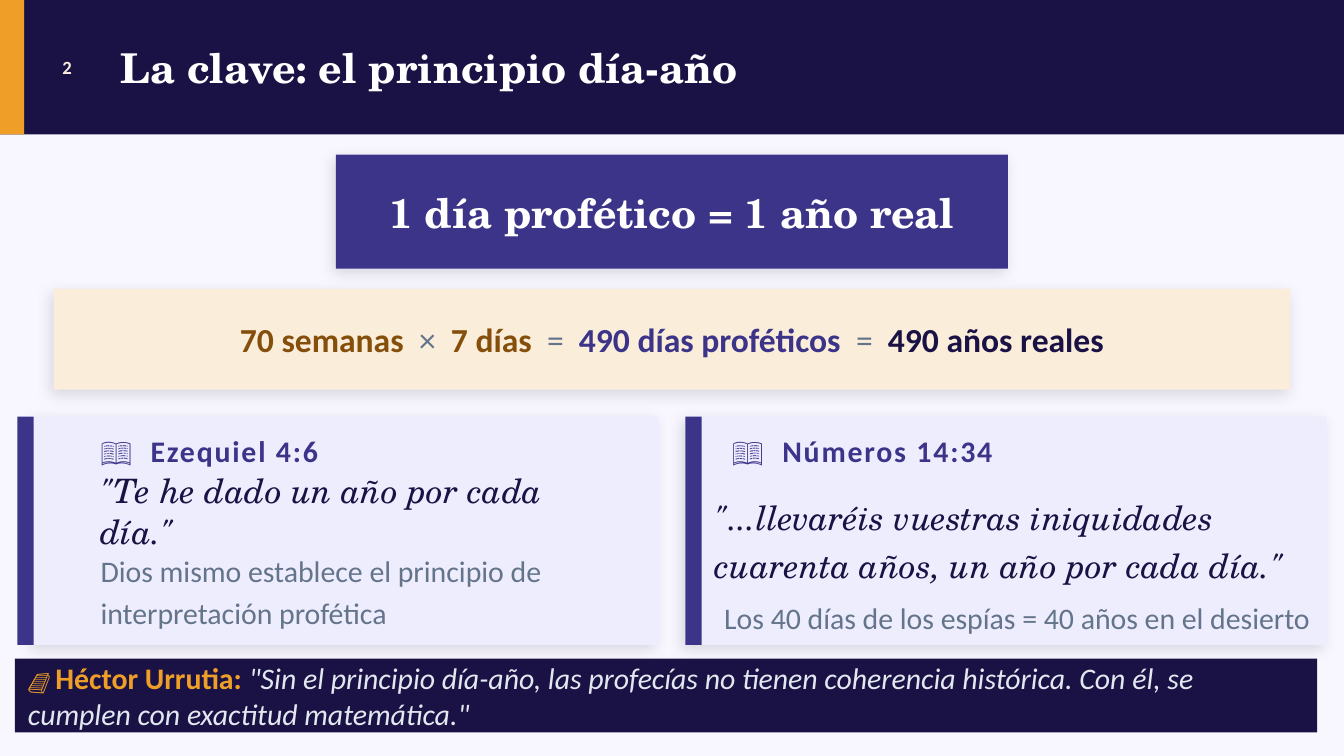
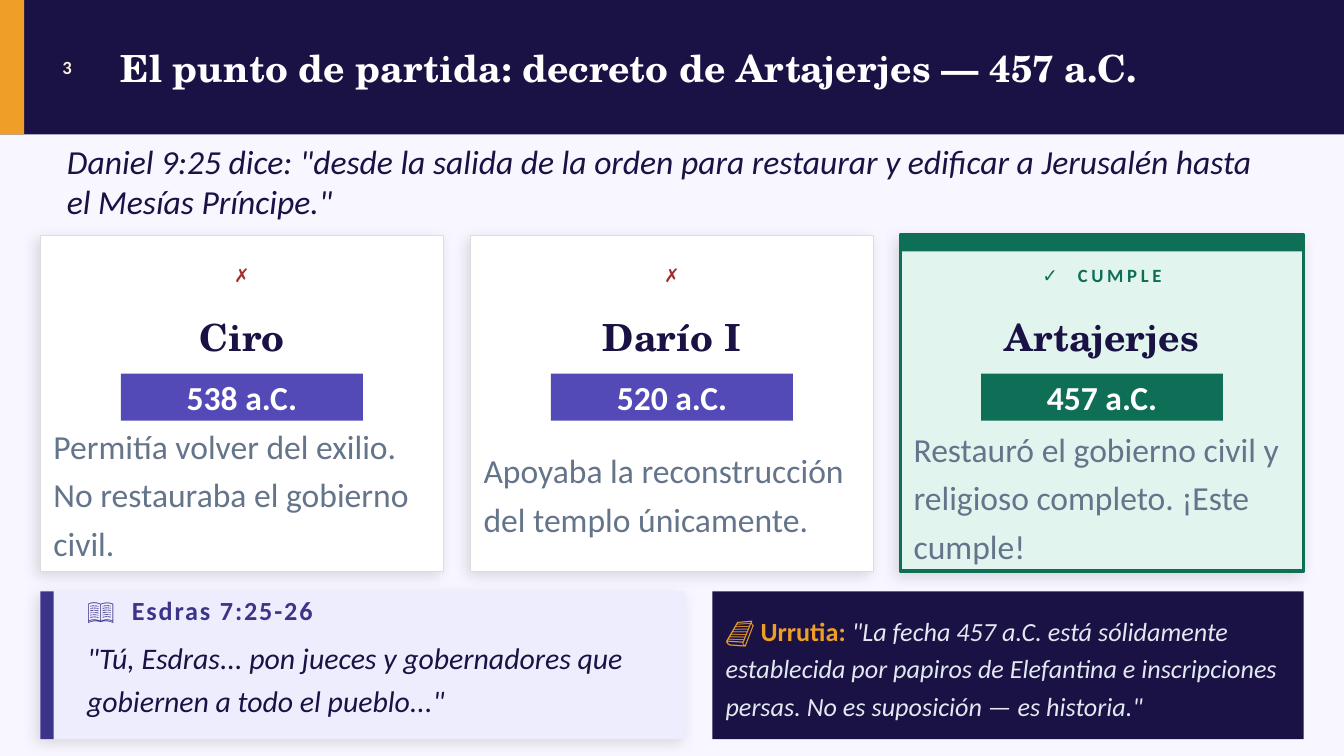
import pptx
import pptx.dml.color
import pptx.enum.shapes
import pptx.enum.text
import pptx.oxml
import pptx.oxml.ns
import pptx.util
from pptx.util import Inches

COLORS = {
    "background": "F8F7FF",
    "navy": "1A1245",
    "amber": "EF9F27",
    "cream": "FAEEDA",
    "brown": "854F0B",
    "indigo": "3C3489",
    "violet": "534AB7",
    "lavender": "EEEDFE",
    "slate": "64748B",
    "pale": "E2E8F0",
    "white": "FFFFFF",
    "border": "DDDDDD",
    "red": "A32D2D",
    "green": "0F6E56",
    "mint": "E1F5EE",
}
SANS = "Calibri"
SERIF = "TeX Gyre Schola"
LEFT = pptx.enum.text.PP_ALIGN.LEFT
CENTER = pptx.enum.text.PP_ALIGN.CENTER


def color(name):
    return pptx.dml.color.RGBColor.from_string(COLORS[name])


def inside(box, left, top, width, height):
    return box[0] + left, box[1] + top, width, height


def add_shadow(shape):
    effects = shape._element.spPr.find(pptx.oxml.ns.qn("a:effectLst"))
    effects.append(pptx.oxml.parse_xml(
        f'<a:outerShdw {pptx.oxml.ns.nsdecls("a")} blurRad="{pptx.util.Pt(8)}" '
        f'dist="{pptx.util.Pt(3)}" dir="{135 * 60000}" algn="bl" rotWithShape="0">'
        '<a:srgbClr val="000000"><a:alpha val="12000"/></a:srgbClr></a:outerShdw>'))


def add_panel(slide, box, fill, shadow=False, border=None, border_width=0):
    shape = slide.shapes.add_shape(
        pptx.enum.shapes.MSO_SHAPE.RECTANGLE, *map(Inches, box))
    shape.fill.solid()
    shape.fill.fore_color.rgb = color(fill)
    if border:
        shape.line.color.rgb = color(border)
        shape.line.width = pptx.util.Pt(border_width)
    else:
        shape.line.fill.background()
    shape.shadow.inherit = False
    if shadow:
        add_shadow(shape)


def text_run(text, size, ink, font=SANS, bold=False, italic=False, tracking=0):
    return text, size, ink, font, bold, italic, tracking


def add_text(slide, box, *runs, align=LEFT, line_spacing=None):
    text_frame = slide.shapes.add_textbox(*map(Inches, box)).text_frame
    text_frame.word_wrap = True
    text_frame.vertical_anchor = pptx.enum.text.MSO_ANCHOR.MIDDLE
    paragraph = text_frame.paragraphs[0]
    paragraph.alignment = align
    if line_spacing:
        paragraph.line_spacing = line_spacing
    for text, size, ink, font, bold, italic, tracking in runs:
        run = paragraph.add_run()
        run.text = text
        run.font.size = pptx.util.Pt(size)
        run.font.name = font
        run.font.color.rgb = color(ink)
        run.font.bold = bold
        run.font.italic = italic
        if tracking:
            run._r.get_or_add_rPr().set("spc", str(tracking * 100))


def add_page(presentation, number, title, title_size):
    slide = presentation.slides.add_slide(presentation.slide_layouts[6])
    slide.background.fill.solid()
    slide.background.fill.fore_color.rgb = color("background")
    add_panel(slide, (0, 0, 10, 1), "navy")
    add_panel(slide, (0, 0, 0.18, 1), "amber")
    add_text(slide, (0.3, 0, 0.4, 1),
             text_run(str(number), 10, "cream", bold=True), align=CENTER)
    add_text(slide, (0.8, 0, 9, 1),
             text_run(title, title_size, "white", SERIF, bold=True))
    return slide


def add_equation(slide, box):
    add_panel(slide, box, "cream", shadow=True)
    terms = [("70 semanas", "brown"), ("  ×  ", "slate"), ("7 días", "brown"),
             ("  =  ", "slate"), ("490 días proféticos", "indigo"),
             ("  =  ", "slate"), ("490 años reales", "navy")]
    add_text(slide, box, *[text_run(text, 18, ink, bold=ink != "slate")
                           for text, ink in terms], align=CENTER)


def add_verse_card(slide, box, bar, reference, reference_box, reference_size):
    add_panel(slide, box, "lavender", shadow=True)
    add_panel(slide, inside(box, *bar, box[3]), "indigo")
    add_text(slide, inside(box, *reference_box),
             text_run(f"📖  {reference}", reference_size, "indigo", bold=True, tracking=1))


def add_quote_band(slide, box, text_width, runs, line_spacing=None):
    add_panel(slide, box, "navy")
    add_text(slide, (*box[:2], text_width, box[3]), *runs, line_spacing=line_spacing)


def add_decree_card(slide, box, king, year, verdict, reason, fulfilled):
    if fulfilled:
        add_panel(slide, box, "mint", True, "green", 2)
        add_panel(slide, inside(box, 0, 0, box[2], 0.12), "green")
    else:
        add_panel(slide, box, "white", True, "border", 0.5)
    add_text(slide, inside(box, 0, 0.12, box[2], 0.35),
             text_run(verdict, 10, "green" if fulfilled else "red", bold=True, tracking=2),
             align=CENTER)
    add_text(slide, inside(box, 0, 0.53, box[2], 0.45),
             text_run(king, 20, "navy", SERIF, bold=True), align=CENTER)
    year_box = inside(box, 0.6, 1.03, box[2] - 1.2, 0.35)
    add_panel(slide, year_box, "green" if fulfilled else "violet")
    add_text(slide, year_box, text_run(year, 18, "white", bold=True), align=CENTER)
    add_text(slide, inside(box, 0, 1.47 if fulfilled else 1.45, box[2], 0.9),
             text_run(reason, 18, "slate"), line_spacing=1.2)


def build_principle_slide(presentation):
    slide = add_page(presentation, 2, "La clave: el principio día-año", 22)
    key_box = (2.5, 1.15, 5, 0.85)
    add_panel(slide, key_box, "indigo", shadow=True)
    add_text(slide, key_box,
             text_run("1 día profético = 1 año real", 22, "white", SERIF, bold=True),
             align=CENTER)
    add_equation(slide, (0.4, 2.15, 9.2, 0.75))
    verses = [
        ((0.25, 3.1, 4.65, 1.7), (-0.12, 0, 0.12), "Ezequiel 4:6", (0.4, 0.1, 4.1, 0.3),
         '"Te he dado un año por cada día."', (0.4, 0.45, 4.1, 0.5), None,
         "Dios mismo establece el principio de interpretación profética",
         (0.4, 1, 4.1, 0.55)),
        ((5.1, 3.1, 4.77, 1.7), (0, 0, 0.12), "Números 14:34", (0.25, 0.1, 4.1, 0.3),
         '"...llevaréis vuestras iniquidades cuarenta años, un año por cada día."',
         (0.12, 0.57, 4.58, 0.65), 1.2,
         "Los 40 días de los espías = 40 años en el desierto",
         (0.19, 1.27, 4.58, 0.4)),
    ]
    for (box, bar, reference, reference_box, quote, quote_box, quote_spacing,
         note, note_box) in verses:
        add_verse_card(slide, box, bar, reference, reference_box, 16)
        add_text(slide, inside(box, *quote_box),
                 text_run(quote, 18, "navy", SERIF, italic=True),
                 line_spacing=quote_spacing)
        add_text(slide, inside(box, *note_box), text_run(note, 16, "slate"),
                 line_spacing=1.2)
    add_quote_band(slide, (0.11, 4.9, 9.69, 0.55), 9.44, [
        text_run("📘 ", 11, "amber", bold=True),
        text_run("Héctor Urrutia: ", 16, "amber", bold=True),
        text_run('"Sin el principio día-año, las profecías no tienen coherencia histórica. '
                 'Con él, se cumplen con exactitud matemática."', 16, "pale", italic=True),
    ])


def build_decree_slide(presentation):
    slide = add_page(
        presentation, 3, "El punto de partida: decreto de Artajerjes — 457 a.C.", 20)
    add_text(slide, (0.4, 1.1, 9.2, 0.5), text_run(
        'Daniel 9:25 dice: "desde la salida de la orden para restaurar y edificar '
        'a Jerusalén hasta el Mesías Príncipe."', 18, "navy", italic=True))
    decrees = [
        ("Ciro", "538 a.C.", "✗",
         "Permitía volver del exilio. No restauraba el gobierno civil.", False),
        ("Darío I", "520 a.C.", "✗",
         "Apoyaba la reconstrucción del templo únicamente.", False),
        ("Artajerjes", "457 a.C.", "✓  CUMPLE",
         "Restauró el gobierno civil y religioso completo. ¡Este cumple!", True),
    ]
    for column, decree in enumerate(decrees):
        add_decree_card(slide, (0.3 + 3.2 * column, 1.75, 3, 2.5), *decree)
    verse_box = (0.3, 4.4, 4.8, 1.1)
    add_verse_card(slide, verse_box, (0, 0, 0.1), "Esdras 7:25-26",
                   (0.25, 0, 4.5, 0.28), 14)
    add_text(slide, inside(verse_box, 0.25, 0.38, 4.5, 0.5), text_run(
        '"Tú, Esdras... pon jueces y gobernadores que gobiernen a todo el pueblo..."',
        16, "navy", italic=True), line_spacing=1.2)
    add_quote_band(slide, (5.3, 4.4, 4.4, 1.1), 4.45, [
        text_run("📘 Urrutia: ", 14, "amber", bold=True),
        text_run('"La fecha 457 a.C. está sólidamente establecida por papiros de Elefantina '
                 'e inscripciones persas. No es suposición — es historia."',
                 14, "pale", italic=True),
    ], line_spacing=1.2)


def main():
    presentation = pptx.Presentation()
    presentation.slide_width = Inches(10)
    presentation.slide_height = Inches(10) * 9 // 16
    build_principle_slide(presentation)
    build_decree_slide(presentation)
    presentation.save("out.pptx")


if __name__ == "__main__":
    main()
